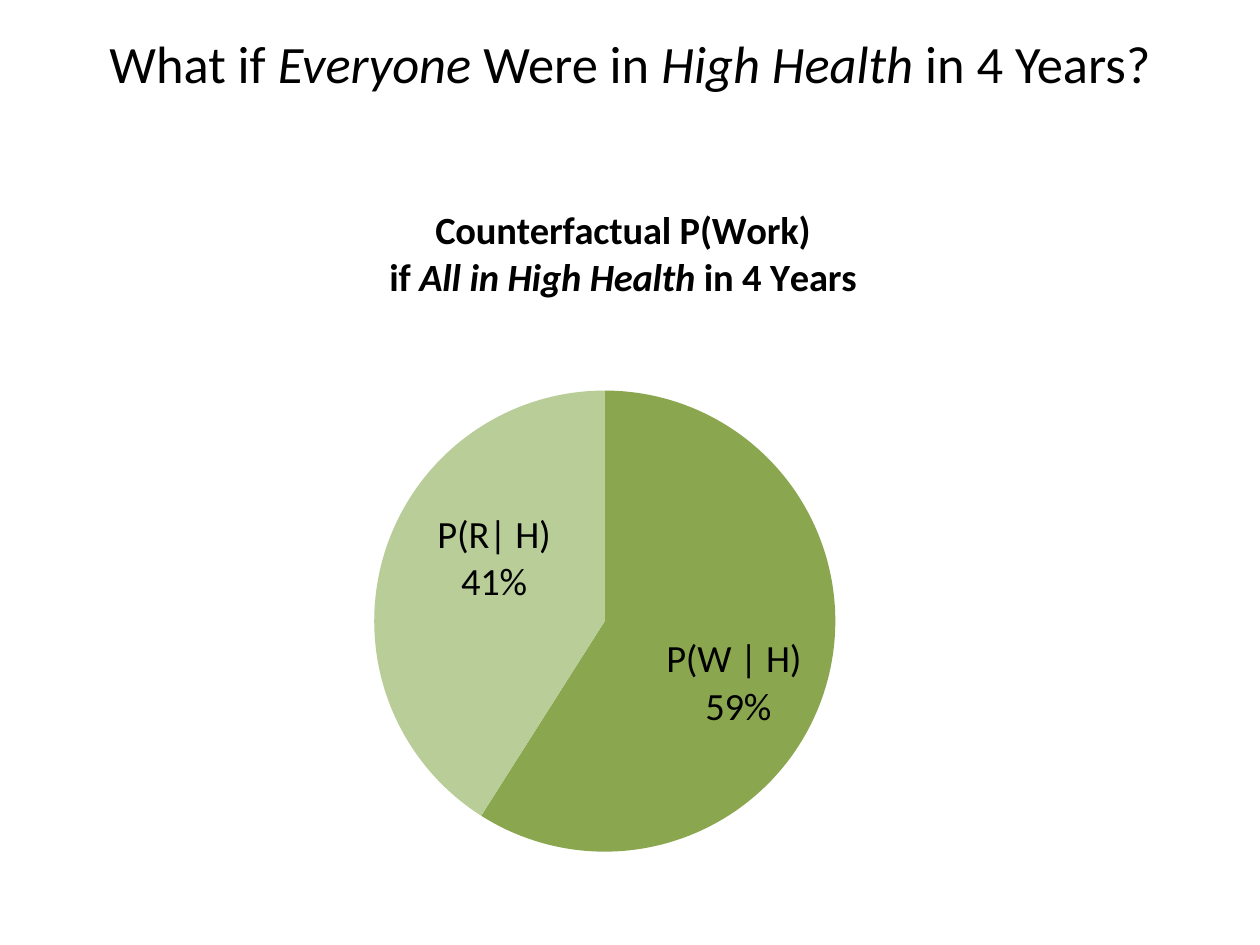
from lxml import etree
from pptx import Presentation
from pptx.chart.data import CategoryChartData
from pptx.dml.color import RGBColor
from pptx.enum.chart import XL_CHART_TYPE, XL_LABEL_POSITION
from pptx.enum.text import MSO_ANCHOR, PP_ALIGN
from pptx.oxml.ns import qn
from pptx.util import Inches, Pt

PIE = XL_CHART_TYPE.PIE
LABEL_CENTER = XL_LABEL_POSITION.CENTER
MIDDLE = MSO_ANCHOR.MIDDLE
CENTER = PP_ALIGN.CENTER


def add_runs(paragraph, texts, size, bold=False):
    """Add runs to a paragraph; every second one is italic."""
    paragraph.alignment = CENTER
    for index, text in enumerate(texts):
        run = paragraph.add_run()
        run.text = text
        run.font.name = "Calibri"
        run.font.size = Pt(size)
        run.font.bold = bold
        run.font.italic = index % 2 == 1
        run.font.color.rgb = RGBColor.from_string("000000")


def place(element, position, **settings):
    """Give a chart part a manual layout, in fractions of the chart."""
    for old in element.findall(qn("c:layout")):
        element.remove(old)
    layout = etree.Element(qn("c:layout"))
    manual = etree.SubElement(layout, qn("c:manualLayout"))
    for name, value in settings.items():
        etree.SubElement(manual, qn("c:" + name)).set("val", str(value))
    element.insert(position, layout)


prs = Presentation()
prs.slide_width, prs.slide_height = Inches(10), Inches(7.5)
slide = prs.slides.add_slide(prs.slide_layouts[5])

title = slide.shapes.title
title.left, title.top = Inches(0), Inches(0)
title.width, title.height = Inches(10), Inches(1)
title.text_frame.vertical_anchor = MIDDLE
add_runs(title.text_frame.paragraphs[0],
         ["What if ", "Everyone", " Were in ", "High Health", " in 4 Years?"], 30)

chart_data = CategoryChartData(number_format="0")
chart_data.categories = ["P(W | H) ", "P(R | H)"]
chart_data.add_series("Series 1", [59, 41])
chart = slide.shapes.add_chart(PIE, Inches(1.92), Inches(1.42),
                               Inches(6), Inches(6), chart_data).chart
chart.has_legend = False
chart.font.name = "Calibri"
chart.font.size = Pt(10)
chart.font.color.rgb = RGBColor.from_string("000000")

chart.has_title = True
heading = chart.chart_title.text_frame
add_runs(heading.paragraphs[0], ["Counterfactual P(Work)"], 22, bold=True)
add_runs(heading.add_paragraph(), ["if ", "All in High Health", " in 4 Years"],
         22, bold=True)
place(chart.chart_title._element, 1, xMode="edge", yMode="edge", x=0.19, y=0.03)

plot = chart.plots[0]
plot.vary_by_categories = True
place(chart._chartSpace.find(".//" + qn("c:plotArea")), 0, layoutTarget="inner",
      xMode="edge", yMode="edge", x=0.17, y=0.28, w=0.62, h=0.61)

plot.has_data_labels = True
labels = plot.data_labels
labels.show_category_name = True
labels.show_percentage = True
labels.show_value = False
labels.number_format = "0%"
labels.number_format_is_linked = False
labels.font.size = Pt(22)
labels.position = LABEL_CENTER

slices = [
    ("8AA64F", "P(W | H) ", "59%", 0.03, 0.04),
    ("B8CD97", "P(R| H)", "41%", 0, -0.04),
]
for index, (color, name, share, dx, dy) in enumerate(slices):
    point = plot.series[0].points[index]
    point.format.fill.solid()
    point.format.fill.fore_color.rgb = RGBColor.from_string(color)
    point.format.line.fill.background()
    caption = point.data_label.text_frame
    add_runs(caption.paragraphs[0], [name], 22)
    add_runs(caption.add_paragraph(), [share], 22)
    point.data_label.position = LABEL_CENTER
    place(caption._txBody.getparent().getparent(), 1, x=dx, y=dy)

prs.save("out.pptx")
